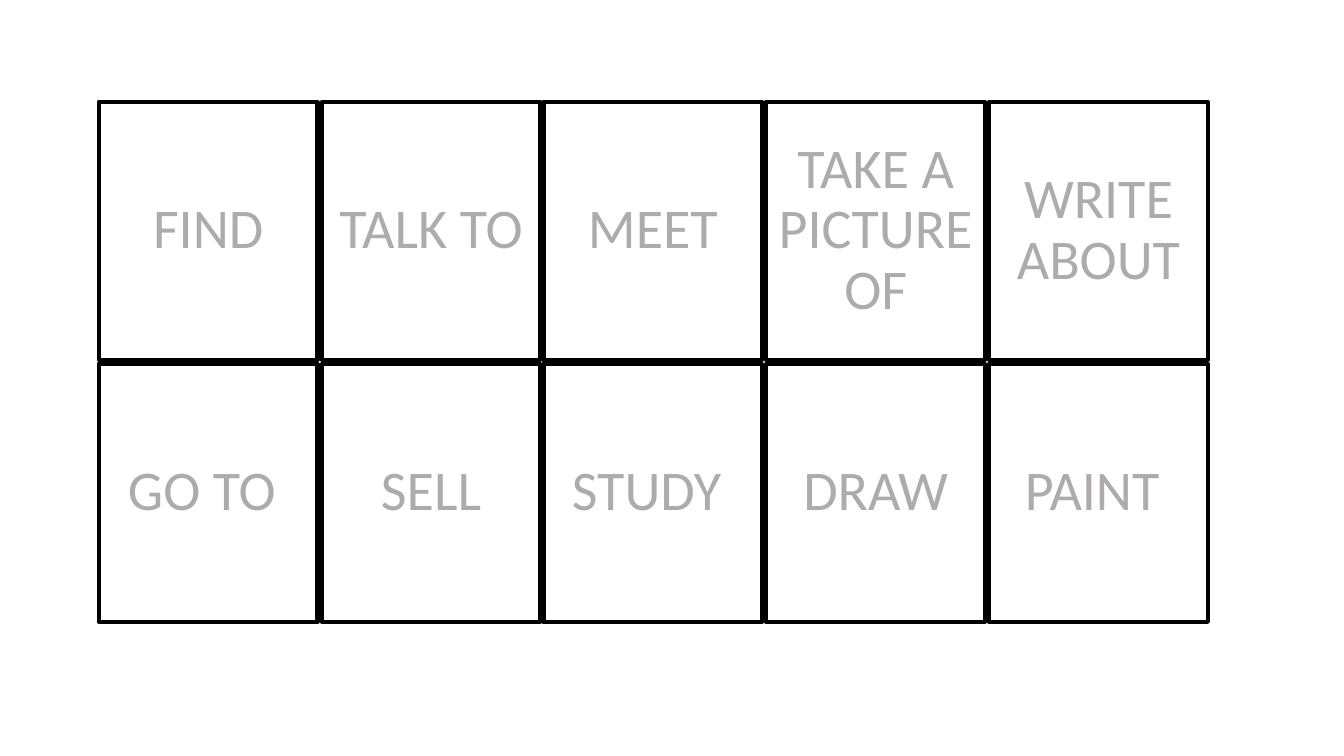
from pptx import Presentation
from pptx.dml.color import RGBColor
from pptx.enum.text import MSO_ANCHOR, MSO_AUTO_SIZE, PP_ALIGN
from pptx.util import Pt

PX = 9144  # 100 px to the inch
LEFT, TOP = 98, 101
CARD_WIDTH, CARD_HEIGHT = 217, 256
COLUMN_PITCH, ROW_PITCH = 220.7, 260
CARD_ROWS = [
    ["FIND", "TALK TO", "MEET", "TAKE A PICTURE OF", "WRITE ABOUT"],
    ["GO TO ", "SELL", "STUDY ", "DRAW", "PAINT "],
]


def color(value):
    return RGBColor.from_string(value)


presentation = Presentation()
presentation.slide_width = 1333 * PX
presentation.slide_height = 750 * PX
slide = presentation.slides.add_slide(presentation.slide_layouts[5])

for row, words in enumerate(CARD_ROWS):
    for column, word in enumerate(words):
        is_title = row == 0 and column == 0
        card = slide.shapes.title if is_title else slide.shapes.add_textbox(0, 0, 0, 0)
        card.left = round(LEFT + column * COLUMN_PITCH) * PX
        card.top = (TOP + row * ROW_PITCH) * PX
        card.width = CARD_WIDTH * PX
        card.height = CARD_HEIGHT * PX
        card.line.color.rgb = color("000000")
        card.line.width = Pt(3)

        frame = card.text_frame
        frame.word_wrap = True
        frame.auto_size = MSO_AUTO_SIZE.NONE
        frame.vertical_anchor = MSO_ANCHOR.MIDDLE
        paragraph = frame.paragraphs[0]
        paragraph.alignment = PP_ALIGN.CENTER
        paragraph.line_spacing = 0.9
        run = paragraph.add_run()
        run.text = word
        run.font.name = "Calibri"
        run.font.size = Pt(40)
        run.font.color.rgb = color("AFABAB")

presentation.save("out.pptx")
